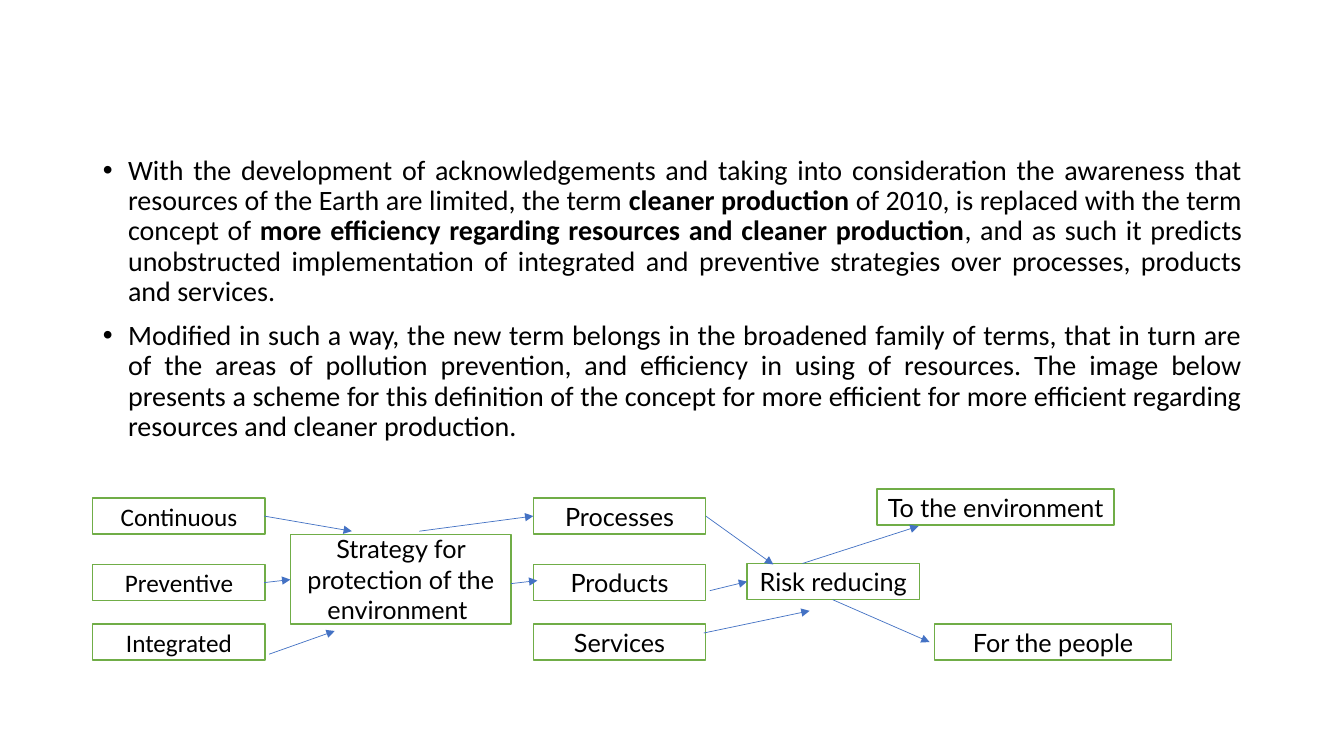
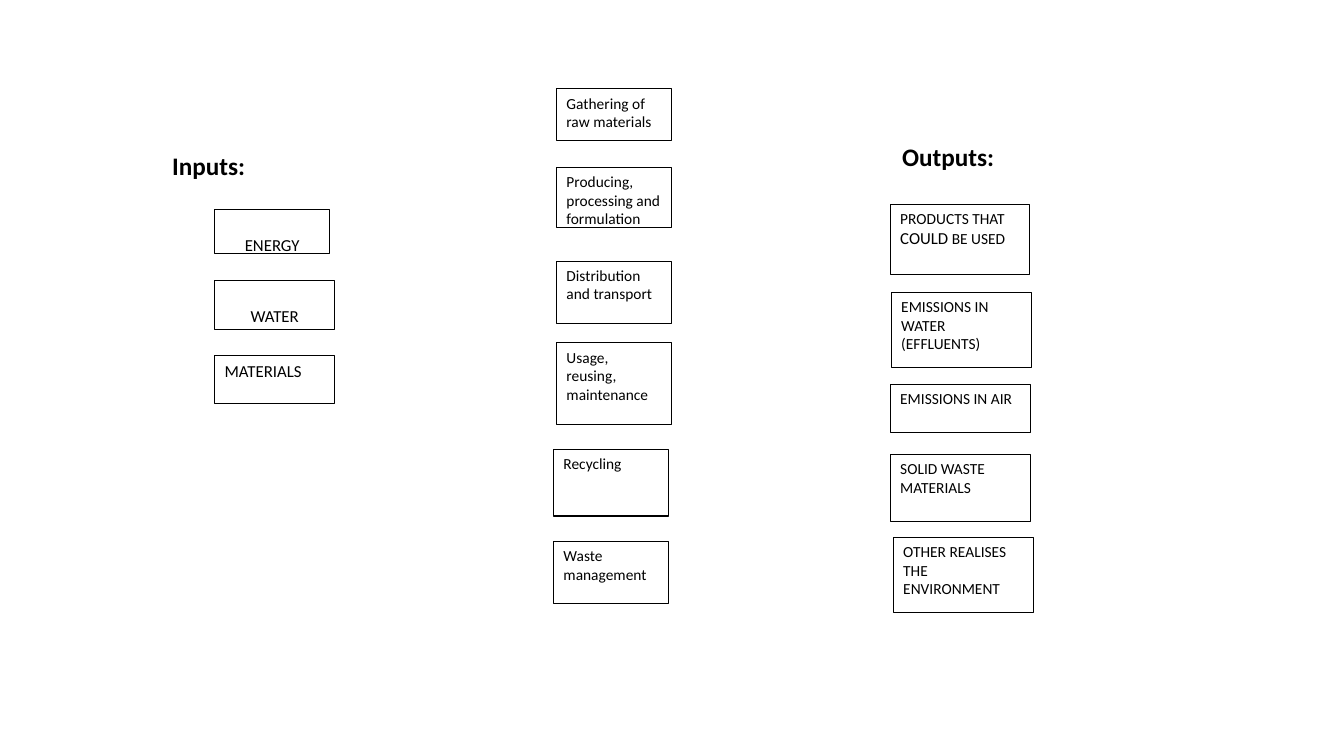
from dataclasses import dataclass

from lxml.etree import SubElement as Sub
from pptx import Presentation
from pptx.dml.color import RGBColor as Rgb
from pptx.enum.shapes import MSO_CONNECTOR as Link, MSO_SHAPE as Form
from pptx.enum.text import MSO_ANCHOR as Anchor, MSO_AUTO_SIZE as Fit, PP_ALIGN as Align
from pptx.oxml.ns import qn
from pptx.util import Inches, Pt


# Theme: colours, fonts, type sizes and line widths
@dataclass(frozen=True)
class Theme:
    ink: Rgb = Rgb(0, 0, 0)
    paper: Rgb = Rgb(255, 255, 255)
    green: Rgb = Rgb(0x70, 0xAD, 0x47)
    blue: Rgb = Rgb(0x44, 0x72, 0xC4)
    font: str = "Calibri"
    alt: str = "Lato"
    body: int = 20
    head: int = 18
    label: int = 12
    small: int = 11
    thick: float = 1
    thin: float = 0.75
    hair: float = 0.5


T = Theme()


@dataclass(frozen=True)
class Span:
    text: str
    bold: bool = False
    size: int = 0


@dataclass(frozen=True)
class Style:
    edge: Rgb
    width: float
    size: int
    font: str = T.font
    align: Align = Align.LEFT
    anchor: Anchor = Anchor.TOP
    inset: float = 0.05


@dataclass(frozen=True)
class Box:
    x: float
    y: float
    w: float
    h: float
    text: str | tuple[Span, ...]
    style: Style


@dataclass(frozen=True)
class Arrow:
    x1: float
    y1: float
    x2: float
    y2: float


STEP = Style(T.green, T.thick, T.head, T.font, Align.CENTER, Anchor.MIDDLE)
FLOW = Style(T.green, T.thick, T.head, T.alt, Align.CENTER, Anchor.MIDDLE)
ITEM = Style(T.ink, T.thin, T.small)
INPUT = Style(T.ink, T.thin, T.label)
LOW = Style(T.ink, T.thin, T.label, align=Align.CENTER, inset=0.25)


# Drawing helpers
def write(par, text: str | tuple[Span, ...], size: int, font: str = T.font) -> None:
    spans = (Span(text),) if isinstance(text, str) else text
    for span in spans:
        run = par.add_run()
        run.text = span.text
        run.font.name = font
        run.font.size = Pt(span.size or size)
        run.font.bold = span.bold
        run.font.color.rgb = T.ink


def draw_box(slide, box: Box) -> None:
    style = box.style
    shape = slide.shapes.add_shape(
        Form.RECTANGLE, Inches(box.x), Inches(box.y), Inches(box.w), Inches(box.h))
    shape.shadow.inherit = False
    shape.fill.solid()
    shape.fill.fore_color.rgb = T.paper
    shape.line.color.rgb = style.edge
    shape.line.width = Pt(style.width)
    frame = shape.text_frame
    frame.word_wrap = True
    frame.vertical_anchor = style.anchor
    frame.margin_top = Inches(style.inset)
    par = frame.paragraphs[0]
    par.alignment = style.align
    write(par, box.text, style.size, style.font)


def draw_arrow(slide, arrow: Arrow) -> None:
    line = slide.shapes.add_connector(
        Link.STRAIGHT, Inches(arrow.x1), Inches(arrow.y1),
        Inches(arrow.x2), Inches(arrow.y2))
    line.line.color.rgb = T.blue
    line.line.width = Pt(T.hair)
    props = line._element.spPr
    Sub(props.find(qn("a:ln")), qn("a:tailEnd"), type="triangle")
    Sub(props, qn("a:effectLst"))


def draw_head(slide, x: float, y: float, w: float, text: str) -> None:
    shape = slide.shapes.add_textbox(Inches(x), Inches(y), Inches(w), Inches(0.4))
    shape.text_frame.word_wrap = True
    write(shape.text_frame.paragraphs[0], (Span(text, bold=True),), T.head)


def draw_list(slide, items: tuple[tuple[Span, ...], ...]) -> None:
    body = slide.placeholders[1]
    body.left, body.top = Inches(0.92), Inches(1.5)
    body.width, body.height = Inches(11.5), Inches(4.76)
    frame = body.text_frame
    frame.auto_size = Fit.NONE
    for i, spans in enumerate(items):
        par = frame.add_paragraph() if i else frame.paragraphs[0]
        par.alignment = Align.JUSTIFY
        par.line_spacing = 0.9
        par.space_before = Pt(10 if i else 0)
        props = par._p.get_or_add_pPr()
        props.set("marL", str(Inches(0.25)))
        props.set("indent", str(Inches(-0.25)))
        Sub(props, qn("a:buFont"), typeface="Arial")
        Sub(props, qn("a:buChar"), char="•")
        write(par, spans, T.body)


# Slide 1: definition and flow scheme
POINTS = (
    (Span("With the development of acknowledgements and taking into consideration "
          "the awareness that resources of the Earth are limited, the term "),
     Span("cleaner production", bold=True),
     Span(" of 2010, is replaced with the term concept of "),
     Span("more efficiency regarding resources and cleaner production", bold=True),
     Span(", and as such it predicts unobstructed implementation of integrated and "
          "preventive strategies over processes, products and services.")),
    (Span("Modified in such a way, the new term belongs in the broadened family of "
          "terms, that in turn are of the areas of pollution prevention, and "
          "efficiency in using of resources. The image below presents a scheme for "
          "this definition of the concept for more efficient for more efficient "
          "regarding resources and cleaner production."),),
)
ROWS = (4.94, 5.6, 6.19)
COLS = (
    (0.92, ("Continuous", "Preventive", "Integrated"), STEP),
    (5.29, ("Processes", "Products", "Services"), FLOW),
)
NODES = (
    Box(2.88, 5.3, 2.19, 0.89, "Strategy for protection of the environment ", FLOW),
    Box(7.41, 5.59, 1.71, 0.36, "Risk reducing", FLOW),
    Box(8.7, 4.85, 2.35, 0.36, "To the environment", FLOW),
    Box(9.27, 6.19, 2.35, 0.36, "For the people", FLOW),
)
ARROWS = (
    Arrow(2.62, 5.12, 3.49, 5.27),
    Arrow(2.67, 6.49, 3.32, 6.26),
    Arrow(2.62, 5.78, 2.88, 5.75),
    Arrow(4.16, 5.27, 5.29, 5.12),
    Arrow(5.07, 5.79, 5.33, 5.76),
    Arrow(6.98, 6.28, 8.03, 6.06),
    Arrow(7, 5.12, 7.67, 5.6),
    Arrow(7.04, 5.86, 7.41, 5.77),
    Arrow(7.96, 5.59, 9.11, 5.22),
    Arrow(8.26, 5.95, 9.22, 6.37),
)


def add_scheme(deck) -> None:
    slide = deck.slides.add_slide(deck.slide_layouts[1])
    title = slide.shapes.title._element
    title.getparent().remove(title)
    draw_list(slide, POINTS)
    for x, names, style in COLS:
        for y, name in zip(ROWS, names):
            draw_box(slide, Box(x, y, 1.71, 0.36, name, style))
    for node in NODES:
        draw_box(slide, node)
    for arrow in ARROWS:
        draw_arrow(slide, arrow)


# Slide 2: inputs, life cycle stages and outputs
CYCLE = (
    Box(2.13, 2.08, 1.14, 0.44, "ENERGY", LOW),
    Box(2.13, 2.78, 1.19, 0.49, "WATER", LOW),
    Box(2.13, 3.53, 1.19, 0.47, "MATERIALS", INPUT),
    Box(5.52, 0.88, 1.14, 0.51, "Gathering of raw materials", ITEM),
    Box(5.52, 1.66, 1.14, 0.6, "Producing, processing and formulation", ITEM),
    Box(5.52, 2.59, 1.14, 0.62, "Distribution and transport", ITEM),
    Box(5.52, 3.4, 1.14, 0.81, "Usage, reusing, maintenance", ITEM),
    Box(5.49, 4.46, 1.14, 0.66, "Recycling", ITEM),
    Box(5.49, 5.37, 1.14, 0.62, "Waste management", ITEM),
    Box(8.83, 2.03, 1.38, 0.69,
        (Span("PRODUCTS THAT "), Span("COULD", size=T.label), Span(" BE USED")), ITEM),
    Box(8.84, 2.9, 1.39, 0.75, "EMISSIONS IN WATER (EFFLUENTS)", ITEM),
    Box(8.83, 3.81, 1.39, 0.48, "EMISSIONS IN AIR", ITEM),
    Box(8.83, 4.51, 1.39, 0.66, "SOLID WASTE MATERIALS", ITEM),
    Box(8.86, 5.33, 1.39, 0.75, "OTHER REALISES THE ENVIRONMENT", ITEM),
)


def add_cycle(deck) -> None:
    slide = deck.slides.add_slide(deck.slide_layouts[6])
    for box in CYCLE:
        draw_box(slide, box)
    draw_head(slide, 8.85, 1.35, 1.76, "Outputs:")
    draw_head(slide, 1.61, 1.44, 2.67, "Inputs:")


def main() -> None:
    deck = Presentation()
    deck.slide_width, deck.slide_height = Inches(13.33), Inches(7.5)
    add_scheme(deck)
    add_cycle(deck)
    deck.save("out.pptx")


if __name__ == "__main__":
    main()
